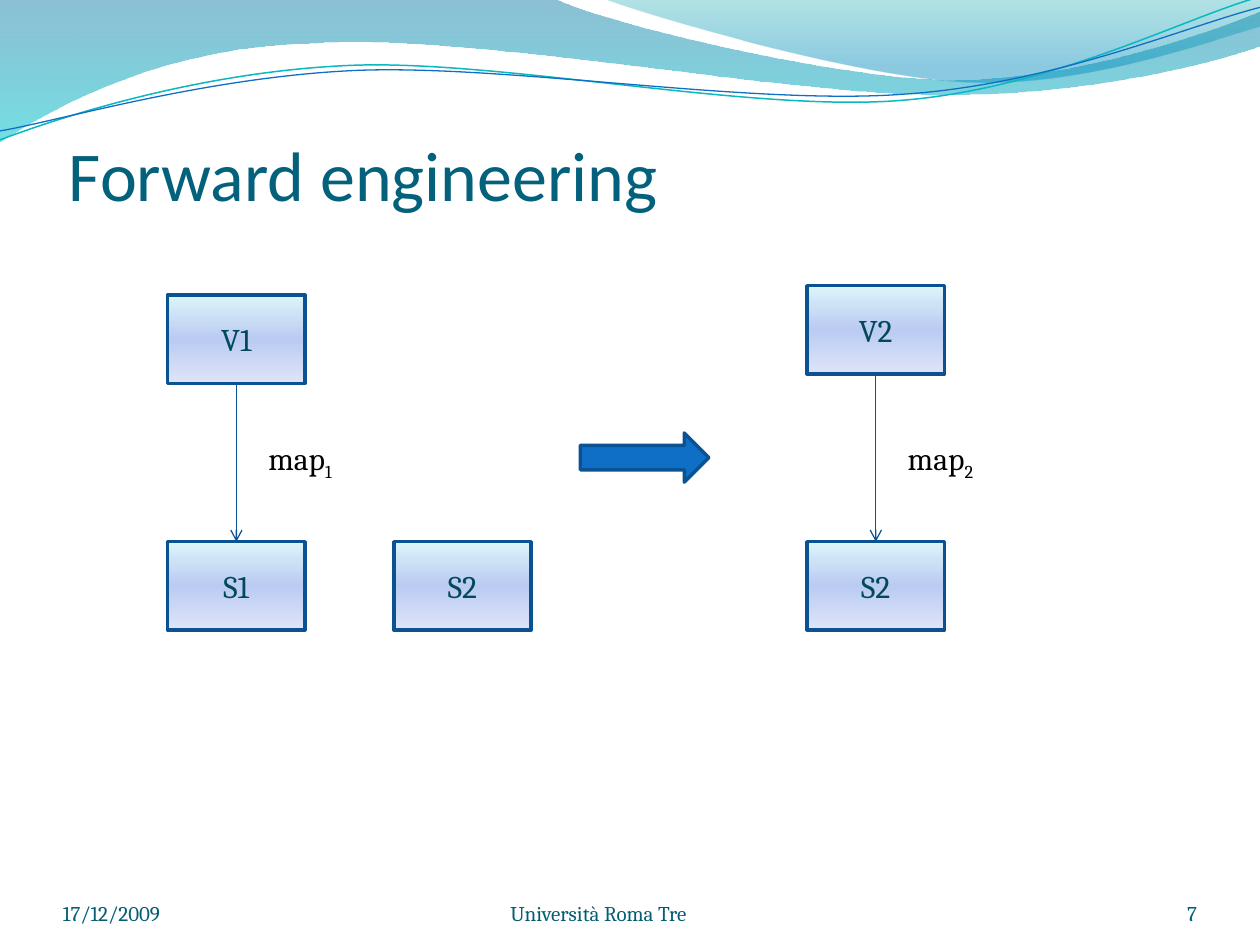
"""Build the "Forward engineering" slide: schemas, mappings and a wave header."""
import dataclasses

import lxml.etree
import pptx
import pptx.dml.color
import pptx.enum.shapes
import pptx.enum.text
import pptx.oxml.ns
import pptx.util

Cm = pptx.util.Cm
Pt = pptx.util.Pt
Shape = pptx.enum.shapes.MSO_SHAPE
Align = pptx.enum.text.PP_ALIGN
Anchor = pptx.enum.text.MSO_ANCHOR
qn = pptx.oxml.ns.qn


@dataclasses.dataclass(frozen=True)
class Theme:
    """Hold the fonts, type sizes and colours."""
    head: str = "Calibri"
    body: str = "Cambria"
    big: float = 40
    mid: float = 18
    small: float = 12
    title: str = "04617B"
    foot: str = "045D75"
    ink: str = "03495C"
    black: str = "000000"
    edge: str = "0B5292"
    link: str = "095295"
    blue: str = "0F6FC6"
    teal: str = "0AB8BF"
    box: tuple = ((0, "DBF5F9", 100), (50, "BBCBF2", 100), (100, "DEE5F8", 100))
    deep: tuple = ((0, "0074A1", 45), (100, "00C6CF", 55))
    pale: tuple = ((0, "00A1A9", 30), (80, "008BBF", 45))


THEME = Theme()
BOX_W, BOX_H = 2.77, 1.78
LEFT, NEXT, RIGHT = 3.38, 7.94, 16.27
BASE = 10.92

WAVES = (
    (((0, 0), (11.18, -0.03), (12.09, 0.43, 16.87, 1.6, 19.25, 1.6),
      (21.67, 1.6, 24.33, 0.66, 25.4, 0.23), (25.43, 0.91),
      (24.97, 1.12, 22.1, 1.93, 18.95, 1.91),
      (15.8, 1.91, 9.7, 0.71, 6.53, 0.86),
      (3.28, 0.91, 1.17, 2.11, -0.03, 2.87)), THEME.deep),
    (((12.17, -0.03), (12.93, 0.28, 17.32, 1.57, 19.53, 1.65),
      (21.84, 1.75, 24.41, 0.81, 25.4, 0.53), (25.4, 0)), THEME.pale),
)
STROKES = (
    (((0, 2.82), (1.22, 2.36, 4.01, 1.45, 7.04, 1.32),
      (10.03, 1.19, 15.06, 2.26, 18.11, 2.03),
      (21.16, 1.8, 23.83, 0.38, 25.35, -0.05)), THEME.teal, 0.85),
    (((0, 2.64), (1.19, 2.44, 4.17, 1.55, 7.19, 1.42),
      (10.24, 1.3, 15.16, 2.13, 18.21, 1.9),
      (21.23, 1.7, 23.9, 0.53, 25.4, 0.15)), THEME.blue, 0.75),
)


def rgb(code):
    """Return the colour for a hex code."""
    return pptx.dml.color.RGBColor.from_string(code)


def style(runs, font, size, code):
    """Set face, size and colour of each run."""
    for run in runs:
        run.font.name = font
        run.font.size = Pt(size)
        run.font.color.rgb = rgb(code)


def stroke(item, code, width):
    """Draw the line of a shape or connector."""
    item.line.color.rgb = rgb(code)
    item.line.width = Pt(width)


def blend(shape, stops):
    """Fill a shape with a gradient that runs downwards."""
    shape.fill.gradient()
    grad = shape._element.spPr.find(qn("a:gradFill"))
    stack = grad.find(qn("a:gsLst"))
    for stop in list(stack):
        stack.remove(stop)
    for place, code, alpha in stops:
        stop = lxml.etree.SubElement(stack, qn("a:gs"), pos=str(place * 1000))
        color = lxml.etree.SubElement(stop, qn("a:srgbClr"), val=code)
        if alpha < 100:
            lxml.etree.SubElement(color, qn("a:alpha"), val=str(alpha * 1000))
    grad.find(qn("a:lin")).set("ang", "5400000")


def bend(shape, route):
    """Turn the segments that have control points into cubic curves."""
    lines = list(shape._element.spPr.iter(qn("a:lnTo")))
    for line, part in zip(lines, route[1:]):
        if len(part) == 2:
            continue
        line.tag = qn("a:cubicBezTo")
        for spot, (x, y) in enumerate((part[:2], part[2:4])):
            knot = lxml.etree.Element(qn("a:pt"), x=str(Cm(x) - shape.left),
                                      y=str(Cm(y) - shape.top))
            line.insert(spot, knot)


def add_path(slide, route, close):
    """Add a freeform along a route of lines and curves."""
    ends = [(Cm(part[-2]), Cm(part[-1])) for part in route]
    pen = slide.shapes.build_freeform(*ends[0])
    pen.add_line_segments(ends[1:], close=close)
    shape = pen.convert_to_shape()
    shape.shadow.inherit = False
    bend(shape, route)
    return shape


def add_waves(slide):
    """Add the wave header."""
    for route, stops in WAVES:
        wave = add_path(slide, route, True)
        blend(wave, stops)
        wave.line.fill.background()
    for route, code, width in STROKES:
        curve = add_path(slide, route, False)
        curve.fill.background()
        stroke(curve, code, width)


def add_title(slide, text):
    """Place and format the title."""
    title = slide.shapes.title
    title.left, title.top, title.width, title.height = map(Cm, (1.39, 2.18, 22.86, 2.16))
    frame = title.text_frame
    frame.text = text
    frame.auto_size = pptx.enum.text.MSO_AUTO_SIZE.NONE
    frame.vertical_anchor = Anchor.BOTTOM
    frame.margin_left = frame.margin_right = frame.margin_bottom = 0
    frame.margin_top = Cm(0.13)
    frame.paragraphs[0].alignment = Align.LEFT
    style(frame.paragraphs[0].runs, THEME.head, THEME.big, THEME.title)


def add_foot(slide, text, left, width, align):
    """Add one footer text."""
    frame = slide.shapes.add_textbox(Cm(left), Cm(17.65), Cm(width), Cm(1.02)).text_frame
    frame.text = text
    frame.word_wrap = True
    frame.vertical_anchor = Anchor.BOTTOM
    frame.margin_left = frame.margin_right = frame.margin_top = frame.margin_bottom = 0
    frame.paragraphs[0].alignment = align
    style(frame.paragraphs[0].runs, THEME.body, THEME.small, THEME.foot)


def add_box(slide, text, left, top):
    """Add a schema box."""
    box = slide.shapes.add_shape(Shape.RECTANGLE, Cm(left), Cm(top), Cm(BOX_W), Cm(BOX_H))
    box.shadow.inherit = False
    blend(box, THEME.box)
    stroke(box, THEME.edge, 2)
    frame = box.text_frame
    frame.text = text
    frame.vertical_anchor = Anchor.MIDDLE
    frame.paragraphs[0].alignment = Align.CENTER
    style(frame.paragraphs[0].runs, THEME.body, THEME.mid, THEME.ink)
    return box


def add_link(slide, start, end):
    """Join two boxes, bottom to top, with an arrow."""
    link = slide.shapes.add_connector(pptx.enum.shapes.MSO_CONNECTOR.STRAIGHT, 0, 0, 0, 0)
    link.begin_connect(start, 2)
    link.end_connect(end, 0)
    stroke(link, THEME.link, 0.75)
    lxml.etree.SubElement(link.line._get_or_add_ln(), qn("a:tailEnd"), type="arrow")
    lxml.etree.SubElement(link._element.spPr, qn("a:effectLst"))


def add_label(slide, text, sub, left):
    """Add a mapping name with a subscript."""
    frame = slide.shapes.add_textbox(Cm(left), Cm(8.73), Cm(1.92), Cm(1.02)).text_frame
    frame.word_wrap = False
    line = frame.paragraphs[0]
    line.text = text
    low = line.add_run()
    low.text = sub
    style(line.runs, THEME.body, THEME.mid, THEME.black)
    low._r.get_or_add_rPr().set("baseline", "-25000")


def add_arrow(slide):
    """Add the block arrow between the two states."""
    arrow = slide.shapes.add_shape(Shape.RIGHT_ARROW, Cm(11.7), Cm(8.73), Cm(2.59), Cm(0.99))
    arrow.shadow.inherit = False
    arrow.fill.solid()
    arrow.fill.fore_color.rgb = rgb(THEME.blue)
    stroke(arrow, THEME.edge, 2)


def main():
    """Build and save the slide."""
    deck = pptx.Presentation()
    deck.slide_width, deck.slide_height = Cm(25.4), Cm(19.05)
    slide = deck.slides.add_slide(deck.slide_layouts[5])
    add_waves(slide)
    add_title(slide, "Forward engineering")
    for foot in (("17/12/2009", 1.27, 5.93, Align.LEFT),
                 ("Università Roma Tre", 7.41, 9.31, Align.CENTER),
                 ("7", 22.01, 2.12, Align.RIGHT)):
        add_foot(slide, *foot)
    for view, top, base, sub, left in (("V1", 5.95, "S1", "1", LEFT),
                                       ("V2", 5.76, "S2", "2", RIGHT)):
        add_link(slide, add_box(slide, view, left, top), add_box(slide, base, left, BASE))
        add_label(slide, "map", sub, left + 1.78)
    add_box(slide, "S2", NEXT, BASE)
    add_arrow(slide)
    deck.save("out.pptx")


if __name__ == "__main__":
    main()
